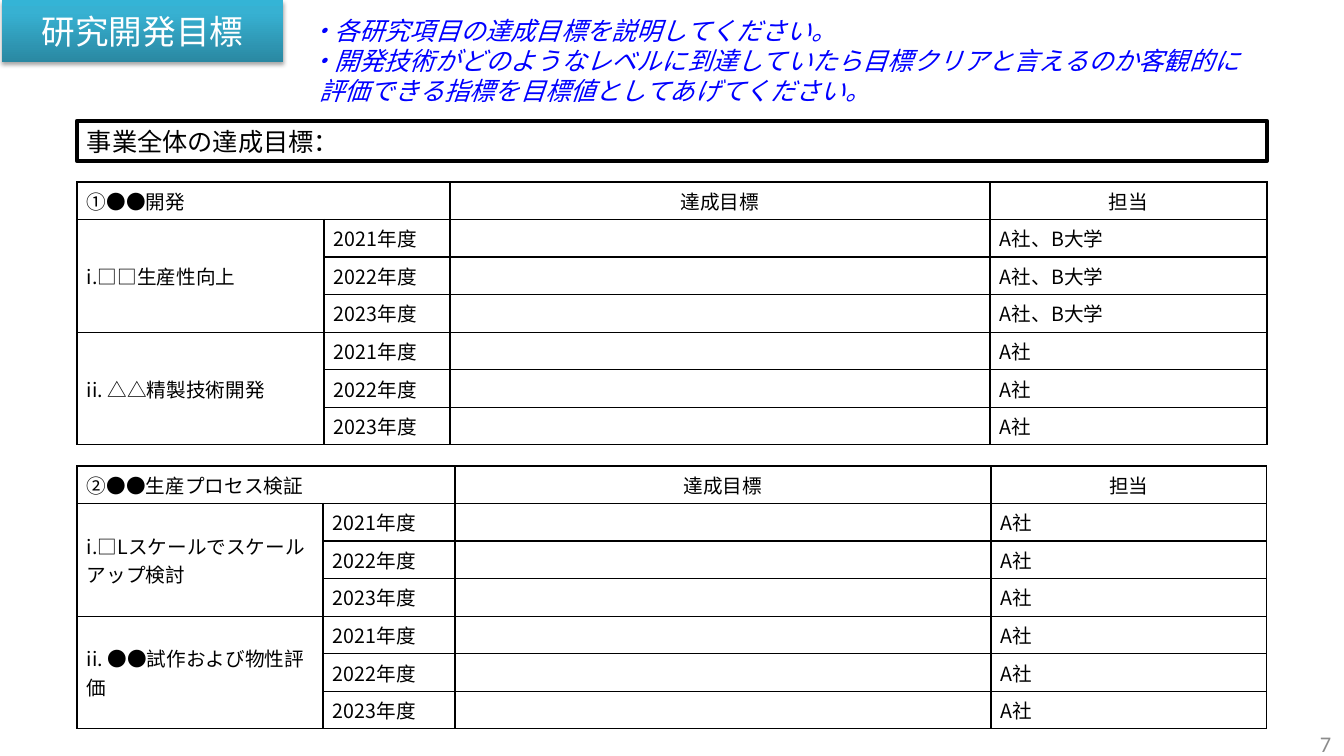
"""Build the research and development goals slide."""
from copy import deepcopy

from lxml.etree import SubElement
from pptx import Presentation
from pptx.dml.color import RGBColor
from pptx.enum.shapes import MSO_SHAPE
from pptx.enum.text import MSO_ANCHOR, MSO_AUTO_SIZE, PP_ALIGN
from pptx.oxml.ns import qn
from pptx.util import Pt

PX = 914400 / 100.8
COLORS = {
    "black": "000000", "white": "FFFFFF", "blue": "0000FF", "grey": "8C8C8C",
    "teal_dark": "2A88A2", "teal": "37B1D2", "teal_light": "34B4D6",
}
LATIN, JAPANESE = "Calibri", "Noto Sans CJK JP"


def px(*lengths):
    return [round(length * PX) for length in lengths]


def write(paragraph, text, size=14, font=JAPANESE, color="black",
          italic=False, align=PP_ALIGN.LEFT):
    paragraph.alignment = align
    paragraph.space_before = Pt(0)
    if not text:
        SubElement(paragraph._p, qn("a:endParaRPr"), sz=str(size * 100))
        return
    run = paragraph.add_run()
    run.text = text
    run.font.size = Pt(size)
    run.font.name = font
    run.font.bold = False
    run.font.italic = italic
    run.font.color.rgb = RGBColor.from_string(COLORS[color])
    SubElement(run._r.get_or_add_rPr(), qn("a:ea"), typeface=font)


presentation = Presentation()
presentation.slide_width, presentation.slide_height = px(1344, 756)
slide = presentation.slides.add_slide(presentation.slide_layouts[1])

title = slide.shapes.title
title.left, title.top, title.width, title.height = px(2, 0, 281, 62)
title.text_frame.vertical_anchor = MSO_ANCHOR.MIDDLE
write(title.text_frame.paragraphs[0], "研究開発目標", size=24, font=LATIN,
      color="white", align=PP_ALIGN.CENTER)
title.fill.gradient()
title.fill.gradient_angle = 90
stop_list = title._element.spPr.find(".//" + qn("a:gsLst"))
stop_list.append(deepcopy(stop_list[-1]))
gradient = [(0, "teal_dark"), (0.8, "teal"), (1, "teal_light")]
for stop, (position, color) in zip(title.fill.gradient_stops, gradient):
    stop.position = position
    stop.color.rgb = RGBColor.from_string(COLORS[color])
effects = SubElement(title._element.spPr, qn("a:effectLst"))
shadow = SubElement(effects, qn("a:outerShdw"), blurRad=str(Pt(3.1)),
                    dist=str(Pt(1.8)), dir="5400000", rotWithShape="0")
shadow_color = SubElement(shadow, qn("a:srgbClr"), val=COLORS["black"])
SubElement(shadow_color, qn("a:alpha"), val="35000")

guidance = slide.placeholders[1]
guidance.left, guidance.top, guidance.width, guidance.height = px(299, 10, 969, 102)
guidance.text_frame.auto_size = MSO_AUTO_SIZE.NONE
guidance.text_frame.vertical_anchor = MSO_ANCHOR.TOP
guidance_lines = [
    "・各研究項目の達成目標を説明してください。",
    "・開発技術がどのようなレベルに到達していたら目標クリアと言えるのか"
    "客観的に評価できる指標を目標値としてあげてください。",
]
for index, line in enumerate(guidance_lines):
    frame = guidance.text_frame
    paragraph = frame.add_paragraph() if index else frame.paragraphs[0]
    write(paragraph, line, size=18, font=LATIN, color="blue", italic=True)
    properties = paragraph._p.get_or_add_pPr()
    hanging = px(10)[0]
    properties.set("marL", str(hanging))
    properties.set("indent", str(-hanging))
    SubElement(properties, qn("a:buNone"))

overall = slide.shapes.add_shape(MSO_SHAPE.RECTANGLE, *px(77, 121, 1190, 40))
overall.shadow.inherit = False
overall.fill.solid()
overall.fill.fore_color.rgb = RGBColor.from_string(COLORS["white"])
overall.line.color.rgb = RGBColor.from_string(COLORS["black"])
overall.line.width = Pt(3)
overall.text_frame.vertical_anchor = MSO_ANCHOR.MIDDLE
overall.text_frame.margin_top = overall.text_frame.margin_bottom = 0
write(overall.text_frame.paragraphs[0], "事業全体の達成目標：", size=18)

YEARS = ["2021年度", "2022年度", "2023年度"]
goal_tables = [
    (182, [247, 126, 540, 277], "①●●開発",
     [("i.□□生産性向上", "A社、B大学"), ("ii. △△精製技術開発", "A社")]),
    (466, [246, 132, 536, 276], "②●●生産プロセス検証",
     [("i.□Lスケールでスケールアップ検討", "A社"),
      ("ii. ●●試作および物性評価", "A社")]),
]
for top, widths, heading, items in goal_tables:
    rows = [[heading, "", "達成目標", "担当"]]
    for item, owner in items:
        for index, year in enumerate(YEARS):
            rows.append(["" if index else item, year, "", owner])
    table = slide.shapes.add_table(
        len(rows), len(widths), *px(77, top, sum(widths), 263)).table
    table.first_row = table.horz_banding = False
    for column, width in zip(table.columns, px(*widths)):
        column.width = width
    table.cell(0, 0).merge(table.cell(0, 1))
    for first in range(1, len(rows), len(YEARS)):
        table.cell(first, 0).merge(table.cell(first + len(YEARS) - 1, 0))
    for row_index, row in enumerate(rows):
        for column_index, text in enumerate(row):
            cell = table.cell(row_index, column_index)
            cell.margin_left, cell.margin_right = px(10, 10)
            cell.margin_top, cell.margin_bottom = px(4, 4)
            cell.vertical_anchor = MSO_ANCHOR.MIDDLE
            centered = row_index == 0 and column_index > 1
            write(cell.text_frame.paragraphs[0], text,
                  align=PP_ALIGN.CENTER if centered else PP_ALIGN.LEFT)
            cell_properties = cell._tc.get_or_add_tcPr()
            for side in ("a:lnL", "a:lnR", "a:lnT", "a:lnB"):
                border = SubElement(cell_properties, qn(side), w=str(Pt(1)))
                border_fill = SubElement(border, qn("a:solidFill"))
                SubElement(border_fill, qn("a:srgbClr"), val=COLORS["black"])
            cell.fill.background()

page_number = slide.shapes.add_textbox(*px(1202, 731, 139, 25))
page_number.text_frame.word_wrap = True
page_number.text_frame.vertical_anchor = MSO_ANCHOR.MIDDLE
write(page_number.text_frame.paragraphs[0], "7", size=16, font=LATIN,
      color="grey", align=PP_ALIGN.RIGHT)

presentation.save("out.pptx")
